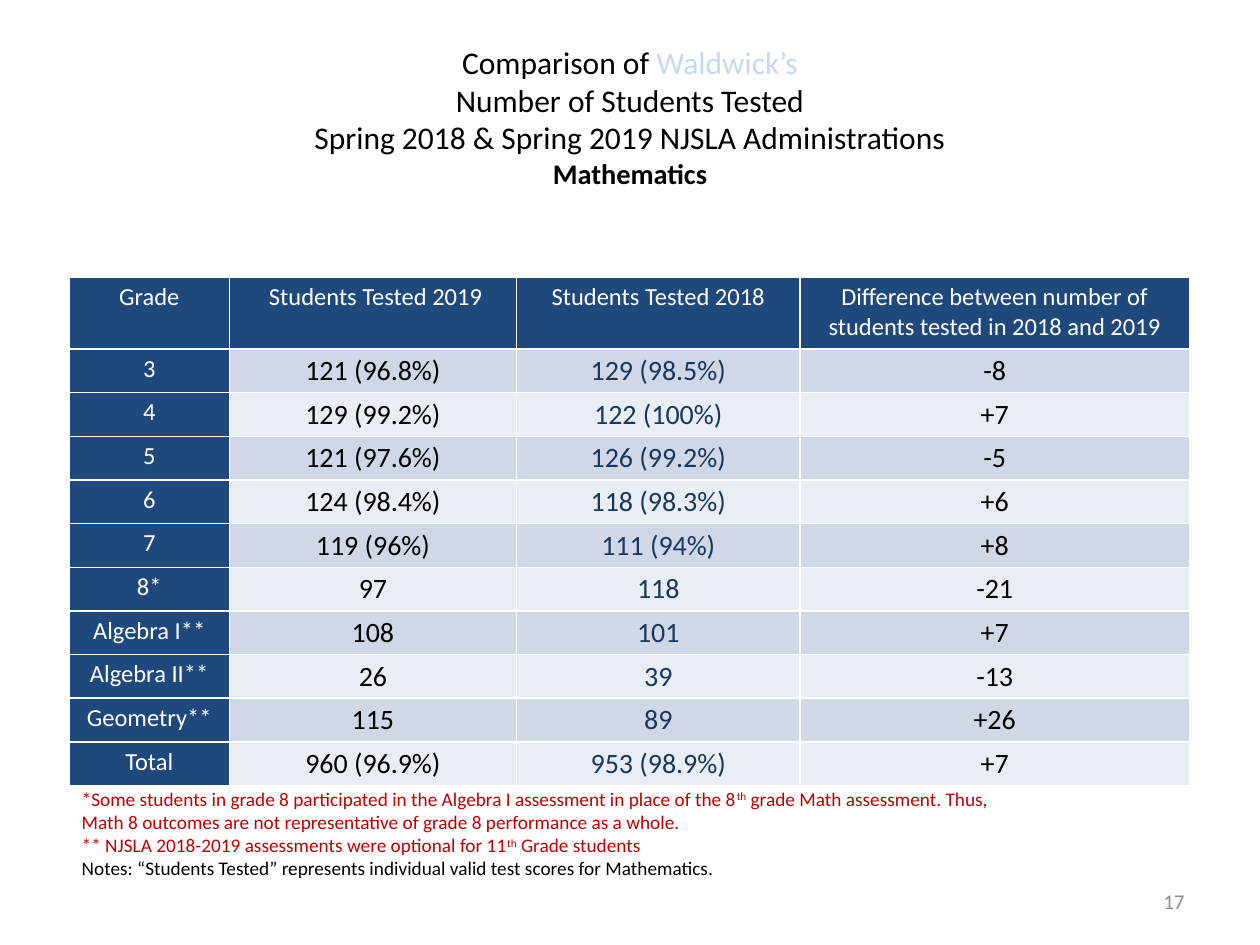
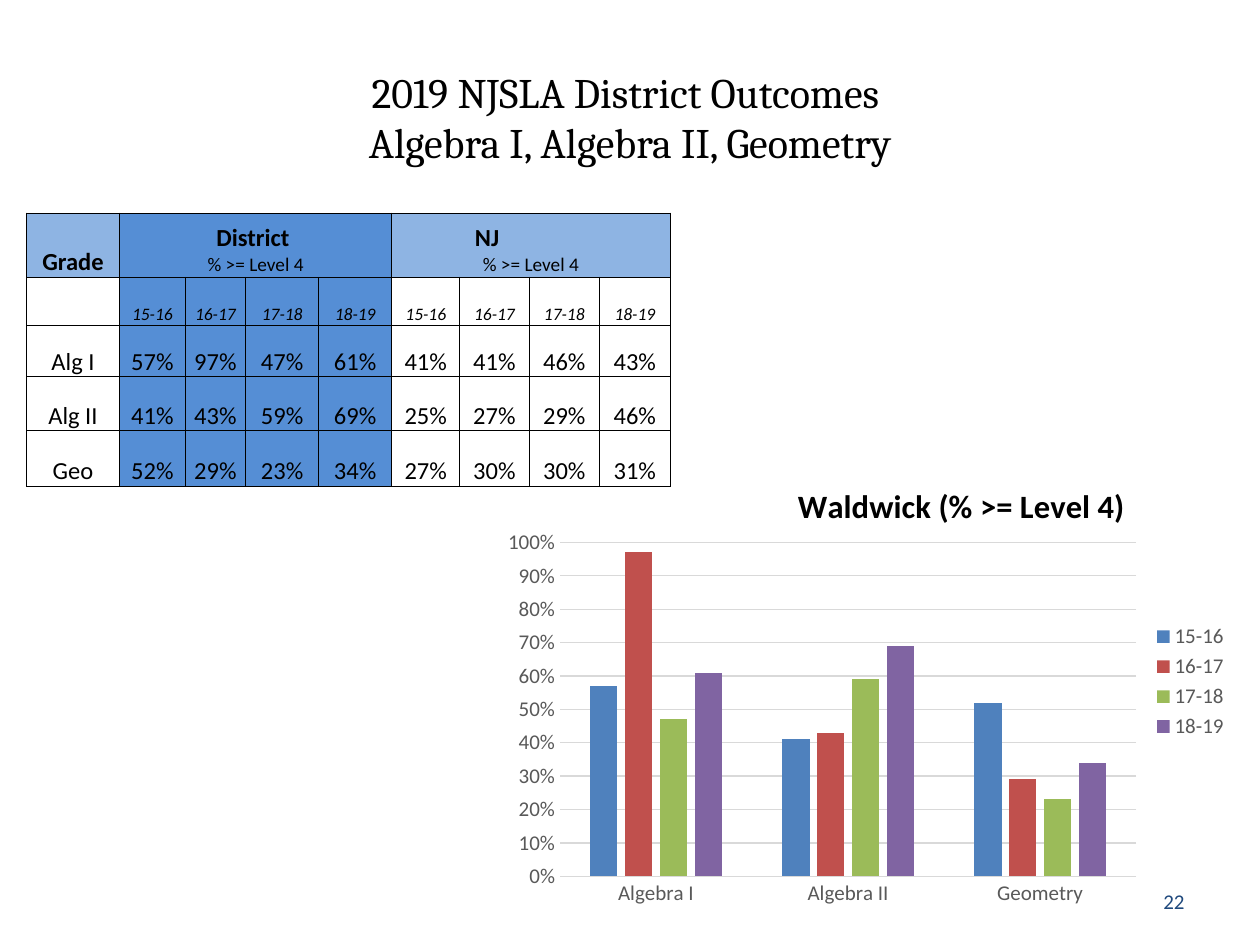
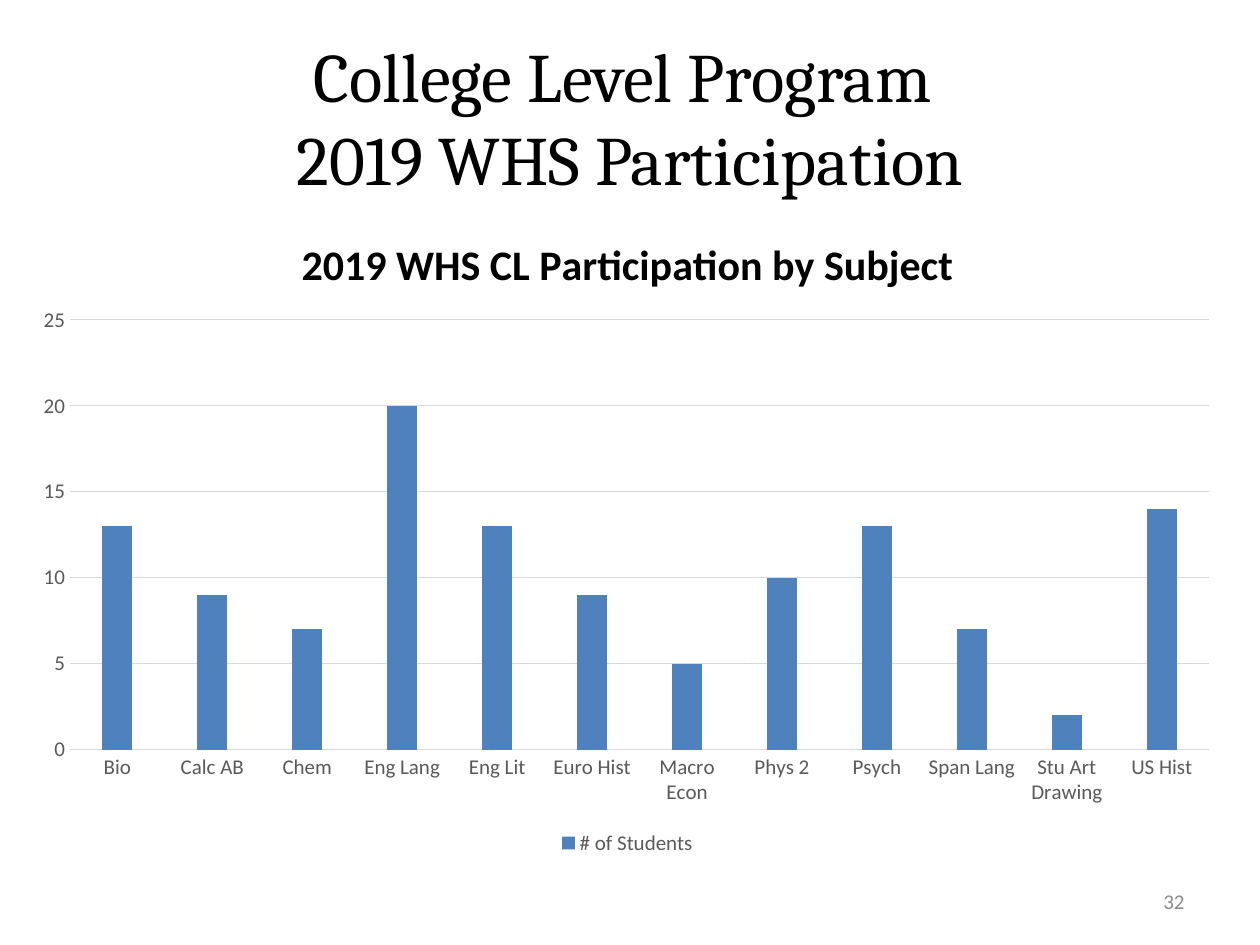
"""Build three slides on district test participation and outcomes."""
from lxml.etree import Element, SubElement
from pptx import Presentation
from pptx.chart.data import CategoryChartData
from pptx.dml.color import RGBColor
from pptx.enum.chart import XL_CHART_TYPE, XL_LEGEND_POSITION, XL_TICK_MARK
from pptx.enum.text import MSO_ANCHOR, PP_ALIGN
from pptx.oxml.ns import qn
from pptx.util import Inches, Pt

BLACK = RGBColor(0x00, 0x00, 0x00)
WHITE = RGBColor(0xFF, 0xFF, 0xFF)
NAVY = RGBColor(0x1F, 0x49, 0x7D)
DARK_NAVY = RGBColor(0x17, 0x37, 0x5E)
PALE_BLUE = RGBColor(0xC6, 0xD9, 0xF1)
BAND_DARK = RGBColor(0xD0, 0xD8, 0xE8)
BAND_LIGHT = RGBColor(0xE9, 0xED, 0xF4)
STATE_BLUE = RGBColor(0x8E, 0xB4, 0xE3)
DISTRICT_BLUE = RGBColor(0x55, 0x8E, 0xD5)
NOTE_RED = RGBColor(0xC0, 0x00, 0x00)
PAGE_GREY = RGBColor(0x8C, 0x8C, 0x8C)
AXIS_GREY = RGBColor(0x59, 0x59, 0x59)
GRID_GREY = RGBColor(0xD9, 0xD9, 0xD9)
SERIES_COLORS = (
    RGBColor(0x4F, 0x81, 0xBD),
    RGBColor(0xC0, 0x50, 0x4D),
    RGBColor(0x9B, 0xBB, 0x59),
    RGBColor(0x80, 0x64, 0xA2),
)

SANS, SERIF = "Calibri", "Cambria"
AXIS_TEXT = {"size": 12, "color": AXIS_GREY}
YEARS = ("15-16", "16-17", "17-18", "18-19")

TESTED_HEADER = (
    "Grade", " Students Tested 2019", "Students Tested 2018",
    "Difference between number of students tested in 2018 and 2019",
)
TESTED_ROWS = (
    ("3", "121 (96.8%)", "129 (98.5%)", "-8"),
    ("4", "129 (99.2%)", "122 (100%)", "+7"),
    ("5", "121 (97.6%)", "126 (99.2%)", "-5"),
    ("6", "124 (98.4%)", "118 (98.3%)", "+6"),
    ("7", "119 (96%)", "111 (94%)", "+8"),
    ("8*", "97", "118", "-21"),
    ("Algebra I**", "108", "101", "+7"),
    ("Algebra II**", "26", "39", "-13"),
    ("Geometry**", "115", "89", "+26"),
    ("Total", "960 (96.9%)", "953 (98.9%)", "+7"),
)
COURSES = (
    ("Alg I", "Algebra I", (57, 97, 47, 61), (41, 41, 46, 43)),
    ("Alg II", "Algebra II", (41, 43, 59, 69), (25, 27, 29, 46)),
    ("Geo", "Geometry", (52, 29, 23, 34), (27, 30, 30, 31)),
)
SUBJECT_STUDENTS = {
    "Bio": 13, "Calc AB": 9, "Chem": 7, "Eng Lang": 20, "Eng Lit": 13,
    "Euro Hist": 9, "Macro Econ": 5, "Phys 2": 10, "Psych": 13,
    "Span Lang": 7, "Stu Art Drawing": 2, "US Hist": 14,
}


def format_font(font, size, color=BLACK, name=SANS, bold=False, italic=False):
    """Apply one text style to a font."""
    values = {"size": Pt(size), "name": name, "bold": bold, "italic": italic}
    for attribute, value in values.items():
        setattr(font, attribute, value)
    font.color.rgb = color


def add_text(paragraph, text, superscript=False, **style):
    """Append styled text, turning each newline into a line break."""
    for index, line in enumerate(text.split("\n")):
        if index:
            paragraph.add_line_break()
        if line:
            run = paragraph.add_run()
            run.text = line
            format_font(run.font, **style)
            if superscript:
                run.font._element.set("baseline", "30000")


def add_text_box(slide, left, top, width, height, anchor=MSO_ANCHOR.MIDDLE):
    """Add a wrapping text box and return its text frame."""
    frame = slide.shapes.add_textbox(
        Inches(left), Inches(top), Inches(width), Inches(height)).text_frame
    frame.word_wrap = True
    frame.vertical_anchor = anchor
    return frame


def add_title(slide, *pieces):
    """Add the centred slide title from pairs of text and style."""
    paragraph = add_text_box(slide, 0.5, 0.3, 9, 1.25).paragraphs[0]
    paragraph.alignment = PP_ALIGN.CENTER
    for text, style in pieces:
        add_text(paragraph, text, **style)


def add_page_number(slide, number, color=PAGE_GREY):
    """Add the page number at the bottom right."""
    paragraph = add_text_box(slide, 7.17, 6.95, 2.33, 0.4).paragraphs[0]
    paragraph.alignment = PP_ALIGN.RIGHT
    add_text(paragraph, str(number), size=12, color=color)


def add_border(cell, color, width):
    """Draw all four borders of a cell."""
    properties = cell._tc.get_or_add_tcPr()
    for side in ("a:lnL", "a:lnR", "a:lnT", "a:lnB"):
        line = SubElement(properties, qn(side), w=str(Pt(width)))
        fill = SubElement(line, qn("a:solidFill"))
        SubElement(fill, qn("a:srgbClr"), val=str(color))


def add_grid(slide, left, top, columns, rows, border, margins, anchor):
    """Add a table with bordered, unfilled cells."""
    table = slide.shapes.add_table(
        len(rows), len(columns), Inches(left), Inches(top),
        Inches(sum(columns)), Inches(sum(rows))).table
    for tracks, attribute, sizes in (
            (table.columns, "width", columns), (table.rows, "height", rows)):
        for track, size in zip(tracks, sizes):
            setattr(track, attribute, Inches(size))
    sides = ("margin_left", "margin_top", "margin_right", "margin_bottom")
    for cell in table.iter_cells():
        for side, margin in zip(sides, margins):
            setattr(cell, side, Inches(margin))
        cell.vertical_anchor = anchor
        add_border(cell, *border)
        cell.fill.background()
    return table


def fill_cell(cell, lines, fill=None):
    """Write centred lines, given as pairs of text and style, into a cell."""
    if fill is not None:
        cell.fill.solid()
        cell.fill.fore_color.rgb = fill
    frame = cell.text_frame
    for index, (text, style) in enumerate(lines):
        paragraph = frame.add_paragraph() if index else frame.paragraphs[0]
        paragraph.alignment = PP_ALIGN.CENTER
        add_text(paragraph, text, **style)


def set_layout(parent, index, inner=False, **position):
    """Place a chart part by fractions of the chart size."""
    for old_layout in parent.findall(qn("c:layout")):
        parent.remove(old_layout)
    layout = Element(qn("c:layout"))
    manual = SubElement(layout, qn("c:manualLayout"))
    if inner:
        SubElement(manual, qn("c:layoutTarget"), val="inner")
    for axis in ("x", "y"):
        SubElement(manual, qn(f"c:{axis}Mode"), val="edge")
    for key, value in position.items():
        SubElement(manual, qn(f"c:{key}"), val=str(value))
    parent.insert(index, layout)


def add_column_chart(slide, box, title, title_size, categories, series,
                     number_format, top_value, legend_position, plot):
    """Add a clustered column chart with grey axes and a legend."""
    data = CategoryChartData(number_format=number_format)
    data.categories = categories
    for name, values in series:
        data.add_series(name, values)
    chart = slide.shapes.add_chart(
        XL_CHART_TYPE.COLUMN_CLUSTERED, *map(Inches, box), data).chart
    format_font(chart.font, 10)
    chart.has_title = True
    add_text(chart.chart_title.text_frame.paragraphs[0], title,
             size=title_size, bold=True)
    chart.has_legend = True
    chart.legend.position = legend_position
    chart.legend.include_in_layout = False
    format_font(chart.legend.font, **AXIS_TEXT)

    for axis in (chart.category_axis, chart.value_axis):
        axis.major_tick_mark = axis.minor_tick_mark = XL_TICK_MARK.NONE
        format_font(axis.tick_labels.font, **AXIS_TEXT)
    scale = chart.value_axis
    scale.minimum_scale, scale.maximum_scale = 0, top_value
    scale.tick_labels.number_format = number_format
    scale.tick_labels.number_format_is_linked = False
    scale.format.line.fill.background()
    for line in (chart.category_axis.format.line,
                 scale.major_gridlines.format.line):
        line.color.rgb = GRID_GREY
        line.width = Pt(0.75)

    columns = chart.plots[0]
    for attribute, value in {"gap_width": 219, "overlap": -27,
                             "vary_by_categories": False}.items():
        setattr(columns, attribute, value)
    for column_set, color in zip(columns.series, SERIES_COLORS):
        column_set.format.fill.solid()
        column_set.format.fill.fore_color.rgb = color
    set_layout(chart._chartSpace.chart.plotArea, 0, inner=True, **plot)
    return chart


def add_tested_table(slide):
    """Add the table of students tested by grade."""
    table = add_grid(slide, 0.55, 2.2, (1.27, 2.28, 2.25, 3.09),
                     (0.57,) + (0.32,) * len(TESTED_ROWS), (WHITE, 1),
                     (0.11, 0.04, 0.11, 0.04), MSO_ANCHOR.TOP)
    label = {"size": 14, "color": WHITE}
    for column, heading in enumerate(TESTED_HEADER):
        fill_cell(table.cell(0, column), [(heading, label)], NAVY)
    for row, (grade, *counts) in enumerate(TESTED_ROWS, 1):
        fill_cell(table.cell(row, 0), [(grade, label)], NAVY)
        band = BAND_DARK if row % 2 else BAND_LIGHT
        for column, count in enumerate(counts, 1):
            color = DARK_NAVY if column == 2 else BLACK
            fill_cell(table.cell(row, column),
                      [(count, {"size": 16, "color": color})], band)


def add_footnotes(slide):
    """Add the notes below the table of students tested."""
    red = {"size": 11, "color": NOTE_RED}
    raised = {**red, "superscript": True}
    notes = (
        (("*Some students in grade 8 participated in the Algebra I "
          "assessment in place of the 8", red), ("th", raised),
         (" grade Math assessment. Thus, Math 8 outcomes are not "
          "representative of grade 8 performance as a whole.", red)),
        (("** NJSLA 2018-2019 assessments were optional for 11", red),
         ("th", raised), (" Grade students", red)),
        (("Notes: “Students Tested” represents individual valid test "
          "scores for Mathematics.", {"size": 11}),),
    )
    frame = add_text_box(slide, 0.55, 6.2, 7.69, 0.84, MSO_ANCHOR.TOP)
    for index, pieces in enumerate(notes):
        paragraph = frame.add_paragraph() if index else frame.paragraphs[0]
        for text, style in pieces:
            add_text(paragraph, text, **style)


def add_outcomes_table(slide):
    """Add the table of district and state outcomes by year."""
    table = add_grid(
        slide, 0.21, 1.69,
        (0.74, 0.52, 0.48, 0.58, 0.58, 0.54, 0.55, 0.56, 0.56),
        (0.51, 0.38, 0.41, 0.43, 0.44), (BLACK, 0.5),
        (0.01, 0.01, 0.01, 0), MSO_ANCHOR.BOTTOM)
    heading = {"size": 14, "bold": True}
    level = ("% >= Level 4", {"size": 11})
    fill_cell(table.cell(0, 0), [("Grade", heading)], STATE_BLUE)
    for first, area, fill in ((1, "District ", DISTRICT_BLUE),
                              (5, "NJ", STATE_BLUE)):
        table.cell(0, first).merge(table.cell(0, first + 3))
        fill_cell(table.cell(0, first), [(area, heading), level], fill)
    state_heading = table.cell(0, 5).text_frame.paragraphs[0]
    state_heading.alignment = PP_ALIGN.LEFT
    state_heading._p.get_or_add_pPr().set("marL", str(Inches(0.65)))

    plain = {"size": 14}
    body = [(YEARS * 2, {"size": 10, "italic": True})]
    for row, (course, _, district, state) in enumerate(COURSES, 2):
        fill_cell(table.cell(row, 0), [(course, plain)])
        body.append(([f"{share}%" for share in district + state], plain))
    for row, (texts, style) in enumerate(body, 1):
        for column, text in enumerate(texts, 1):
            fill_cell(table.cell(row, column), [(text, style)],
                      DISTRICT_BLUE if column <= len(YEARS) else None)


def add_outcomes_chart(slide):
    """Add the chart of district outcomes by course and year."""
    by_year = zip(*(district for _, _, district, _ in COURSES))
    series = [(year, [share / 100 for share in shares])
              for year, shares in zip(YEARS, by_year)]
    chart = add_column_chart(
        slide, (3.91, 3.57, 5.94, 3.68), "Waldwick (% >= Level 4)", 18.6,
        [course for _, course, _, _ in COURSES], series, "0%", 1,
        XL_LEGEND_POSITION.RIGHT, {"x": 0.09, "y": 0.2, "w": 0.77, "h": 0.72})
    set_layout(chart.chart_title._element, 1, x=0.4, y=0.06)


def build_tested_slide(slide):
    """Fill the slide on students tested in mathematics."""
    add_title(
        slide, ("Comparison of ", {"size": 18}),
        ("Waldwick’s\n", {"size": 18, "color": PALE_BLUE}),
        ("Number of Students Tested\n"
         "Spring 2018 & Spring 2019 NJSLA Administrations\n", {"size": 18}),
        ("Mathematics", {"size": 16.2, "bold": True}))
    add_tested_table(slide)
    add_footnotes(slide)
    add_page_number(slide, 17)


def build_outcomes_slide(slide):
    """Fill the slide on algebra and geometry outcomes."""
    add_outcomes_table(slide)
    add_page_number(slide, 22, NAVY)
    add_title(slide, ("2019 NJSLA District Outcomes \n"
                      "Algebra I, Algebra II, Geometry",
                      {"size": 24, "name": SERIF}))
    add_outcomes_chart(slide)


def build_participation_slide(slide):
    """Fill the slide on participation in college-level courses."""
    add_page_number(slide, 32)
    add_title(slide, ("College Level Program \n2019 WHS Participation",
                      {"size": 39.6, "name": SERIF}))
    add_column_chart(
        slide, (0.17, 1.66, 9.62, 5.17),
        "2019 WHS CL Participation by Subject", 24, list(SUBJECT_STUDENTS),
        [("# of Students", list(SUBJECT_STUDENTS.values()))], "General", 25,
        XL_LEGEND_POSITION.BOTTOM,
        {"x": 0.04, "y": 0.17, "w": 0.94, "h": 0.66})


def main():
    """Build and save the presentation."""
    presentation = Presentation()
    presentation.slide_width = Inches(10)
    presentation.slide_height = Inches(7.5)
    blank = presentation.slide_layouts[6]
    for build in (build_tested_slide, build_outcomes_slide,
                  build_participation_slide):
        build(presentation.slides.add_slide(blank))
    presentation.save("out.pptx")


if __name__ == "__main__":
    main()
